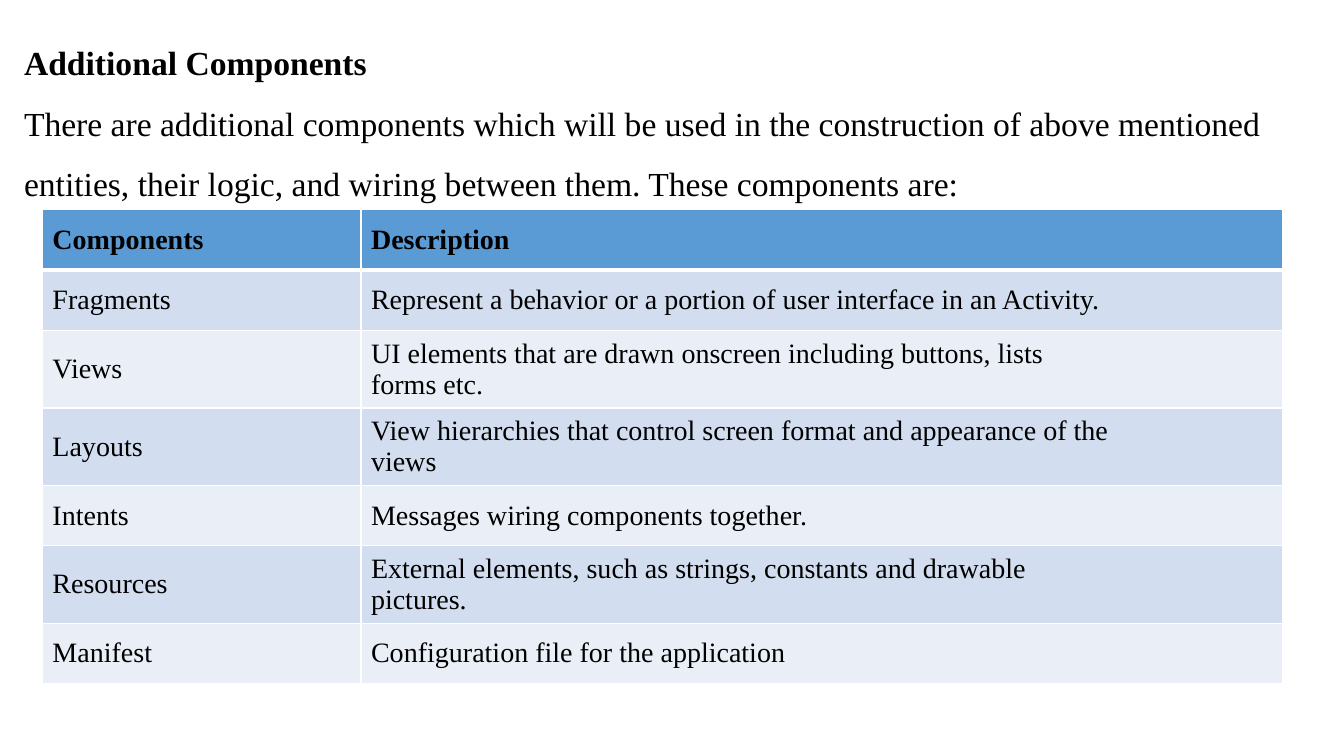
from lxml.etree import SubElement
from pptx import Presentation
from pptx.dml.color import RGBColor
from pptx.enum.text import MSO_ANCHOR
from pptx.oxml.ns import qn
from pptx.util import Pt

PX = 9144
FONT = "Times New Roman"
COLORS = {
    "text": "000000",
    "border": "FFFFFF",
    "header": "5B9BD5",
    "odd": "D2DEEF",
    "even": "EAEFF7",
}
HEADING = "Additional Components"
INTRO = (
    "There are additional components which will be used in the construction "
    "of above mentioned entities, their logic, and wiring between them. "
    "These components are:"
)
ROWS = [
    ("Components", "Description"),
    ("Fragments", "Represent a behavior or a portion of user interface in an Activity."),
    ("Views", "UI elements that are drawn onscreen including buttons, lists\nforms etc."),
    ("Layouts", "View hierarchies that control screen format and appearance of the\nviews"),
    ("Intents", "Messages wiring components together."),
    ("Resources", "External elements, such as strings, constants and drawable\npictures."),
    ("Manifest", "Configuration file for the application"),
]


def px(*lengths):
    return [n * PX for n in lengths]


def add_text(p, text, size=20, bold=False, color="text"):
    for i, line in enumerate(text.split("\n")):
        if i:
            p.add_line_break()
        r = p.add_run()
        r.text = line
        r.font.name = FONT
        r.font.size = Pt(size)
        r.font.bold = bold
        r.font.color.rgb = RGBColor.from_string(COLORS[color])


def add_borders(cell, top, bottom):
    tcPr = cell._tc.get_or_add_tcPr()
    for side, width in (("L", 1), ("R", 1), ("T", top), ("B", bottom)):
        ln = SubElement(tcPr, qn(f"a:ln{side}"), w=str(Pt(width)))
        fill = SubElement(ln, qn("a:solidFill"))
        SubElement(fill, qn("a:srgbClr"), val=COLORS["border"])


def add_intro(slide, left, top, width, height):
    tf = slide.shapes.add_textbox(*px(left, top, width, height)).text_frame
    tf.word_wrap = True
    p = tf.paragraphs[0]
    p.line_spacing = 1.5
    p.space_before = Pt(10)
    add_text(p, HEADING, size=24, bold=True)
    p.add_line_break()
    add_text(p, INTRO, size=24)


def add_components_table(slide, left, top, name_width, description_width, row_height):
    box = px(left, top, name_width + description_width, row_height * len(ROWS))
    table = slide.shapes.add_table(len(ROWS), 2, *box).table
    for column, width in zip(table.columns, px(name_width, description_width)):
        column.width = width
    for i, texts in enumerate(ROWS):
        table.rows[i].height = row_height * PX
        color = "header" if i == 0 else "odd" if i % 2 else "even"
        for j, text in enumerate(texts):
            cell = table.cell(i, j)
            cell.vertical_anchor = MSO_ANCHOR.MIDDLE
            add_borders(cell, top=3 if i == 1 else 1, bottom=3 if i == 0 else 1)
            cell.fill.solid()
            cell.fill.fore_color.rgb = RGBColor.from_string(COLORS[color])
            add_text(cell.text_frame.paragraphs[0], text, bold=i == 0)


def main():
    prs = Presentation()
    prs.slide_width, prs.slide_height = px(1333, 750)
    slide = prs.slides.add_slide(prs.slide_layouts[6])
    add_intro(slide, 14, 17, 1300, 717)
    add_components_table(slide, 42, 208, 316, 914, 60)
    prs.save("out.pptx")


if __name__ == "__main__":
    main()
